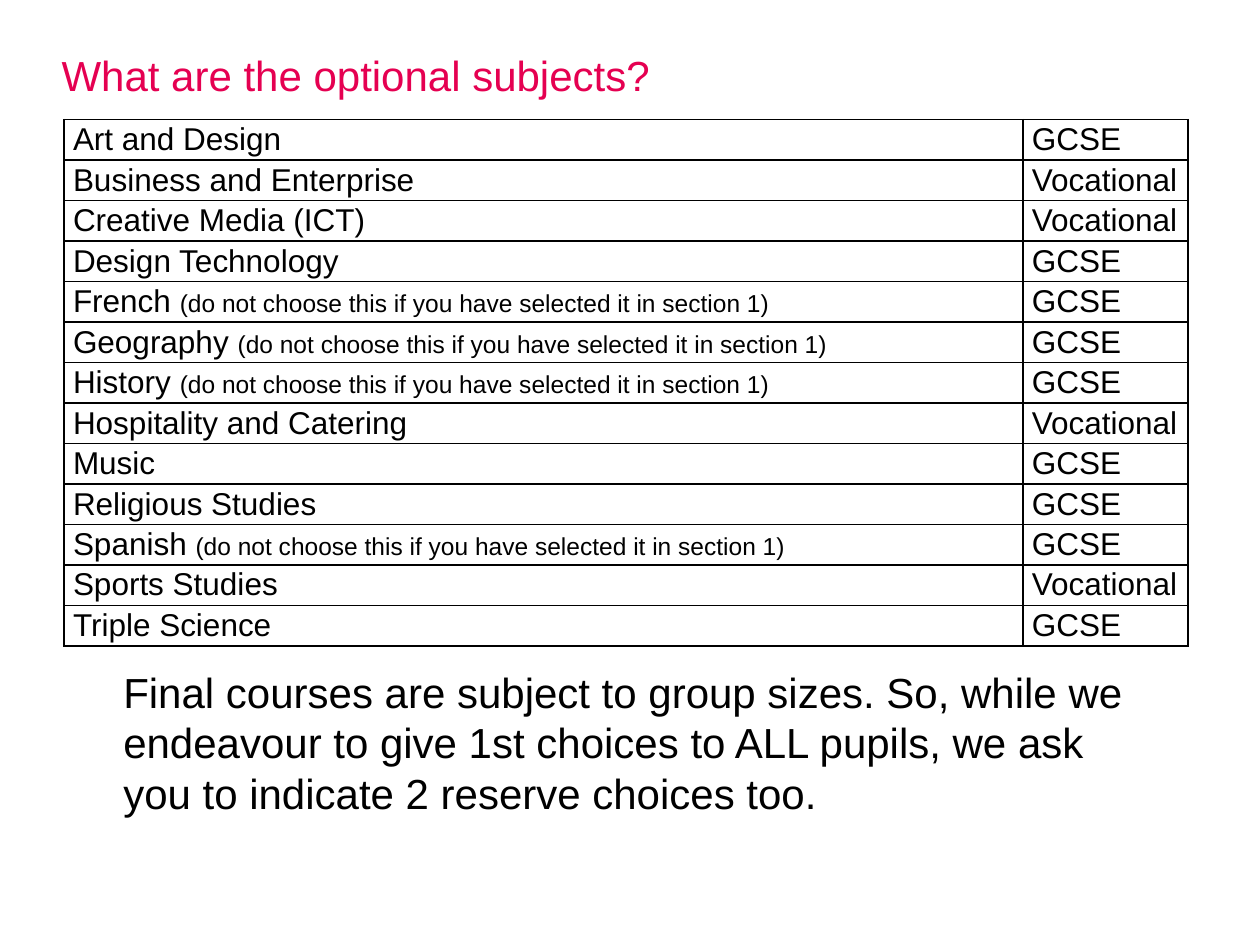
from dataclasses import dataclass

import lxml.etree
import pptx
import pptx.dml.color
import pptx.oxml.ns
import pptx.util

Inches = pptx.util.Inches


@dataclass(frozen=True)
class Theme:
    """Colours, font and type sizes of the slide."""
    font: str = "Arial"
    pink: str = "E50051"
    black: str = "000000"
    large: int = 24
    body: int = 18
    small: int = 14
    line: int = 1


THEME = Theme()
NOTE = "(do not choose this if you have selected it in section 1)"
COURSES = [
    ("Art and Design", "", "GCSE"),
    ("Business and Enterprise", "", "Vocational"),
    ("Creative Media (ICT)", "", "Vocational"),
    ("Design Technology", "", "GCSE"),
    ("French ", NOTE, "GCSE"),
    ("Geography ", NOTE, "GCSE"),
    ("History ", NOTE, "GCSE"),
    ("Hospitality and Catering", "", "Vocational"),
    ("Music", "", "GCSE"),
    ("Religious Studies", "", "GCSE"),
    ("Spanish ", NOTE, "GCSE"),
    ("Sports Studies", "", "Vocational"),
    ("Triple Science", "", "GCSE"),
]


def style(run, size, color=THEME.black):
    """Set the font of a run."""
    run.font.name = THEME.font
    run.font.size = pptx.util.Pt(size)
    run.font.color.rgb = pptx.dml.color.RGBColor.from_string(color)


def add_text(slide, box, text, color):
    """Place one large paragraph in a box."""
    frame = slide.shapes.add_textbox(*map(Inches, box)).text_frame
    frame.word_wrap = True
    frame.text = text
    style(frame.paragraphs[0].runs[0], THEME.large, color)


def add_rules(cell):
    """Draw a thin line on each side of a cell."""
    qn = pptx.oxml.ns.qn
    props = cell._tc.get_or_add_tcPr()
    for index, side in enumerate("LRTB"):
        line = lxml.etree.Element(qn(f"a:ln{side}"), w=str(pptx.util.Pt(THEME.line)))
        fill = lxml.etree.SubElement(line, qn("a:solidFill"))
        lxml.etree.SubElement(fill, qn("a:srgbClr"), val=THEME.black)
        props.insert(index, line)


def fill_cell(cell, text, note=""):
    """Write a cell's text and optional small note."""
    cell.fill.background()
    cell.margin_left = cell.margin_right = Inches(0.07)
    cell.margin_top = cell.margin_bottom = 0
    cell.text_frame.text = text
    para = cell.text_frame.paragraphs[0]
    para.line_spacing = 1.07
    style(para.runs[0], THEME.body)
    if note:
        run = para.add_run()
        run.text = note
        style(run, THEME.small)
    add_rules(cell)


def add_courses(slide, box):
    """Place the table of subjects and awards in a box."""
    left, top, width, height = map(Inches, box)
    table = slide.shapes.add_table(len(COURSES), 2, left, top, width, height).table
    table.first_row = table.horz_banding = False
    award = Inches(1.31)
    table.columns[0].width = width - award
    table.columns[1].width = award
    for row, (name, note, kind) in enumerate(COURSES):
        fill_cell(table.cell(row, 0), name, note)
        fill_cell(table.cell(row, 1), kind)


def main():
    """Build and save the slide."""
    deck = pptx.Presentation()
    deck.slide_width, deck.slide_height = Inches(10), Inches(7.5)
    slide = deck.slides.add_slide(deck.slide_layouts[6])
    add_text(slide, (0.39, 0.34, 8.81, 0.5), "What are the optional subjects?", THEME.pink)
    add_text(
        slide,
        (0.88, 5.24, 8.32, 1.31),
        "Final courses are subject to group sizes. So, while we endeavour to give "
        "1st choices to ALL pupils, we ask you to indicate 2 reserve choices too.",
        THEME.black,
    )
    add_courses(slide, (0.51, 0.95, 8.92, 4.17))
    deck.save("out.pptx")


if __name__ == "__main__":
    main()
